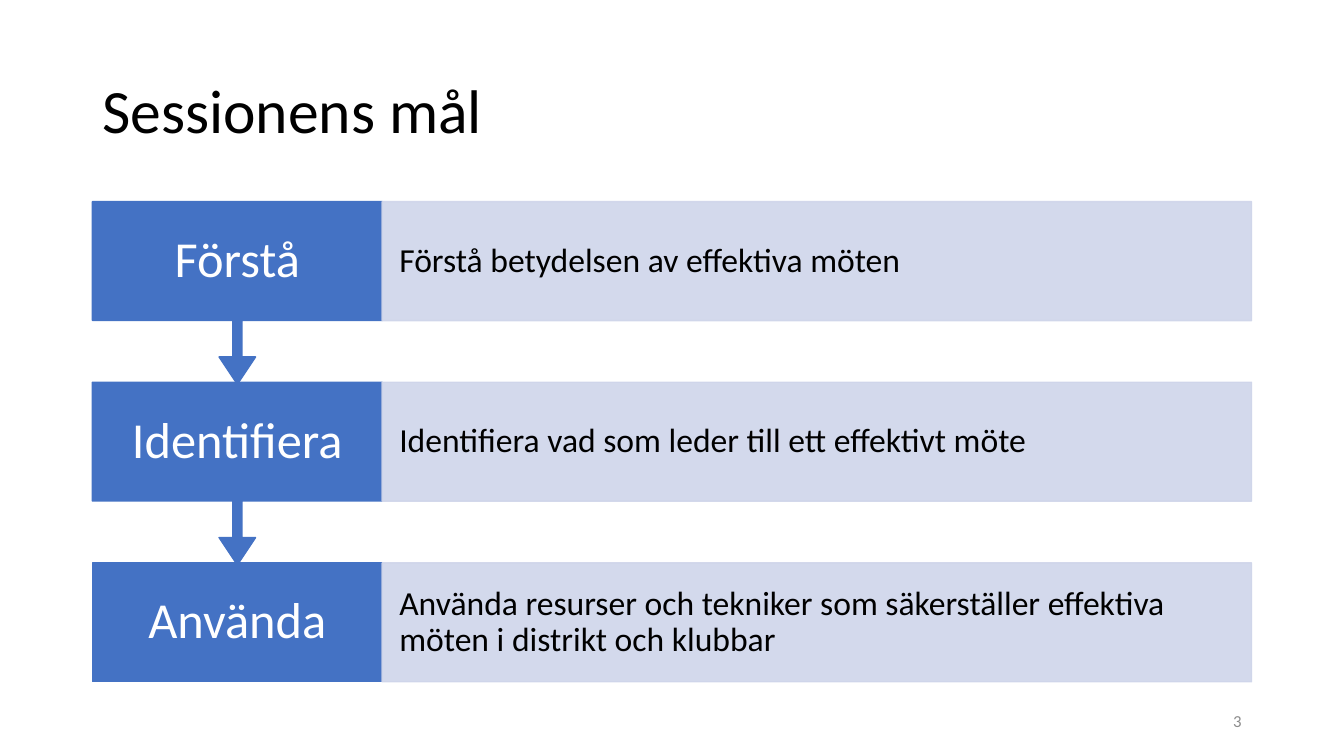
from dataclasses import dataclass

from lxml import etree
from pptx import Presentation
from pptx.dml.color import RGBColor
from pptx.enum.shapes import MSO_SHAPE
from pptx.enum.text import MSO_ANCHOR, PP_ALIGN
from pptx.oxml.ns import qn
from pptx.util import Pt

RECTANGLE = MSO_SHAPE.RECTANGLE
ARROW_CALLOUT = MSO_SHAPE.UP_ARROW_CALLOUT
MIDDLE = MSO_ANCHOR.MIDDLE
LEFT, CENTER, RIGHT = PP_ALIGN.LEFT, PP_ALIGN.CENTER, PP_ALIGN.RIGHT


@dataclass(frozen=True)
class Theme:
    font: str = "Calibri"
    step: str = "4472C4"
    panel: str = "CFD5EA"
    dark: str = "000000"
    light: str = "FFFFFF"
    muted: str = "8C8C8C"
    title_size: int = 44
    step_size: int = 36
    panel_size: int = 24
    number_size: int = 12


def write(box, text, *, font, size, color, align=LEFT, spacing=0.9, inset=(7.2, 3.6)):
    """Put one paragraph in a box, centred vertically."""
    frame = box.text_frame
    frame.word_wrap = True
    frame.vertical_anchor = MIDDLE
    frame.margin_left = frame.margin_right = Pt(inset[0])
    frame.margin_top = frame.margin_bottom = Pt(inset[1])
    para = frame.paragraphs[0]
    para.alignment = align
    para.line_spacing = spacing
    span = para.add_run()
    span.text = text
    span.font.name = font
    span.font.size = Pt(size)
    span.font.color.rgb = RGBColor.from_string(color)


class Page:
    def __init__(self, deck, theme):
        self.theme = theme
        self.shapes = deck.slides.add_slide(deck.slide_layouts[6]).shapes

    def text(self, area, text, **style):
        box = self.shapes.add_textbox(*map(Pt, area))
        write(box, text, font=self.theme.font, **style)

    def block(self, kind, area, color, opacity=100):
        box = self.shapes.add_shape(kind, *map(Pt, area))
        box.shadow.inherit = False
        box.fill.solid()
        box.fill.fore_color.rgb = box.line.color.rgb = RGBColor.from_string(color)
        box.line.width = Pt(1)
        if opacity < 100:
            for paint in box.element.spPr.iter(qn("a:srgbClr")):
                etree.SubElement(paint, qn("a:alpha"), val=str(opacity * 1000))
        return box

    def step(self, area, label, arrow_height=None):
        """A step box; with an arrow height it points down to the next step."""
        left, top, width, height = area
        if arrow_height:
            callout = self.block(
                ARROW_CALLOUT, (left, top, width, height + arrow_height), self.theme.step)
            callout.rotation = 180
            for index, value in enumerate((0.05, 0.1, 0.15, 0.65)):
                callout.adjustments[index] = value
        else:
            self.block(RECTANGLE, area, self.theme.step)
        # The label stays upright above the turned callout
        self.text(area, label, size=self.theme.step_size, color=self.theme.light,
                  align=CENTER, inset=(14.4, 20))

    def panel(self, area, text):
        box = self.block(RECTANGLE, area, self.theme.panel, opacity=90)
        write(box, text, font=self.theme.font, size=self.theme.panel_size,
              color=self.theme.dark, inset=(12.24, 23.76))


def main():
    theme = Theme()
    deck = Presentation()
    deck.slide_width, deck.slide_height = Pt(960), Pt(540)
    page = Page(deck, theme)

    # Title and page number
    page.text((66, 28.75, 828, 104.4), "Sessionens mål",
              size=theme.title_size, color=theme.dark)
    page.text((678, 500.5, 216, 28.75), "3", size=theme.number_size,
              color=theme.muted, align=RIGHT, spacing=1.0)

    # Steps, drawn from the bottom up so each arrow tip lies on the next box
    goals = [
        ("Förstå", "Förstå betydelsen av effektiva möten"),
        ("Identifiera", "Identifiera vad som leder till ett effektivt möte"),
        ("Använda", "Använda resurser och tekniker som säkerställer "
                    "effektiva möten i distrikt och klubbar"),
    ]
    left, first_top, pitch, height = 66, 144, 129, 85
    step_width, panel_width = 207, 621
    last = len(goals) - 1
    for row in range(last, -1, -1):
        label, text = goals[row]
        top = first_top + row * pitch
        page.step((left, top, step_width, height), label,
                  arrow_height=45.5 if row < last else None)
        page.panel((left + step_width, top, panel_width, height), text)

    deck.save("out.pptx")


if __name__ == "__main__":
    main()
